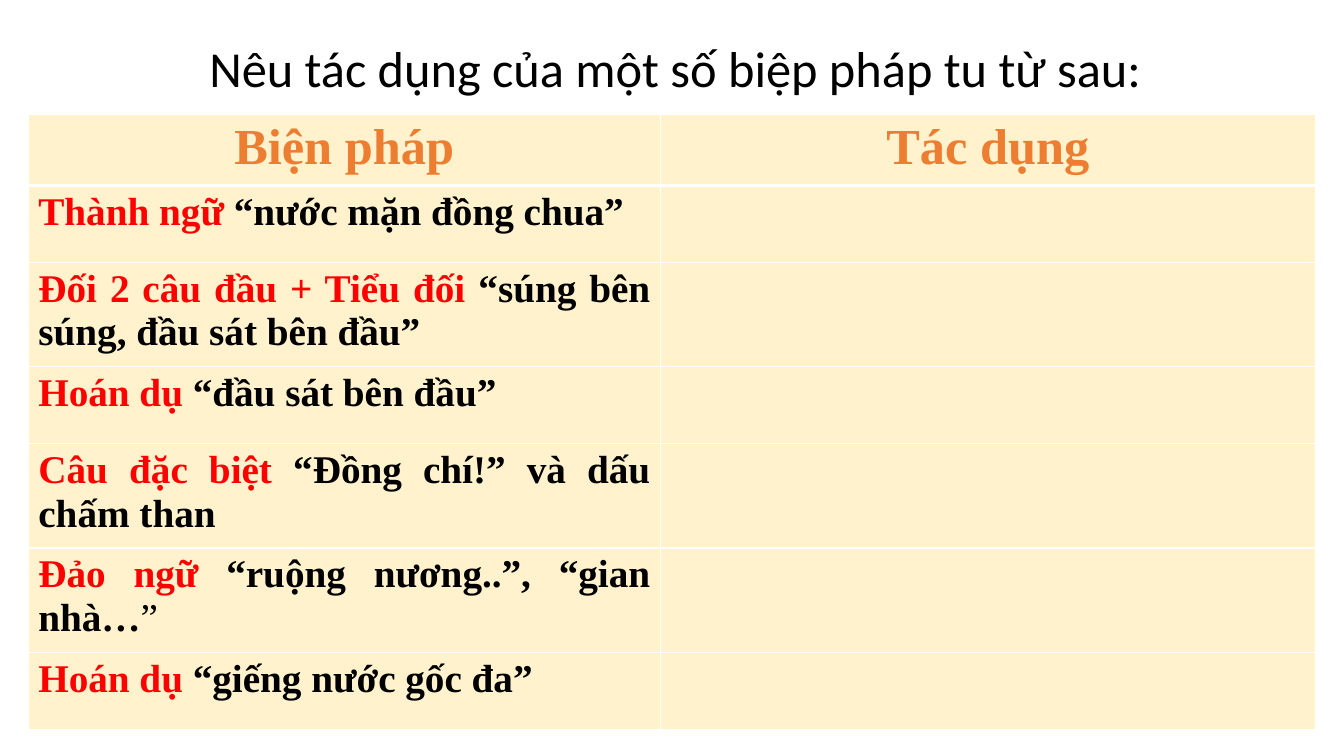
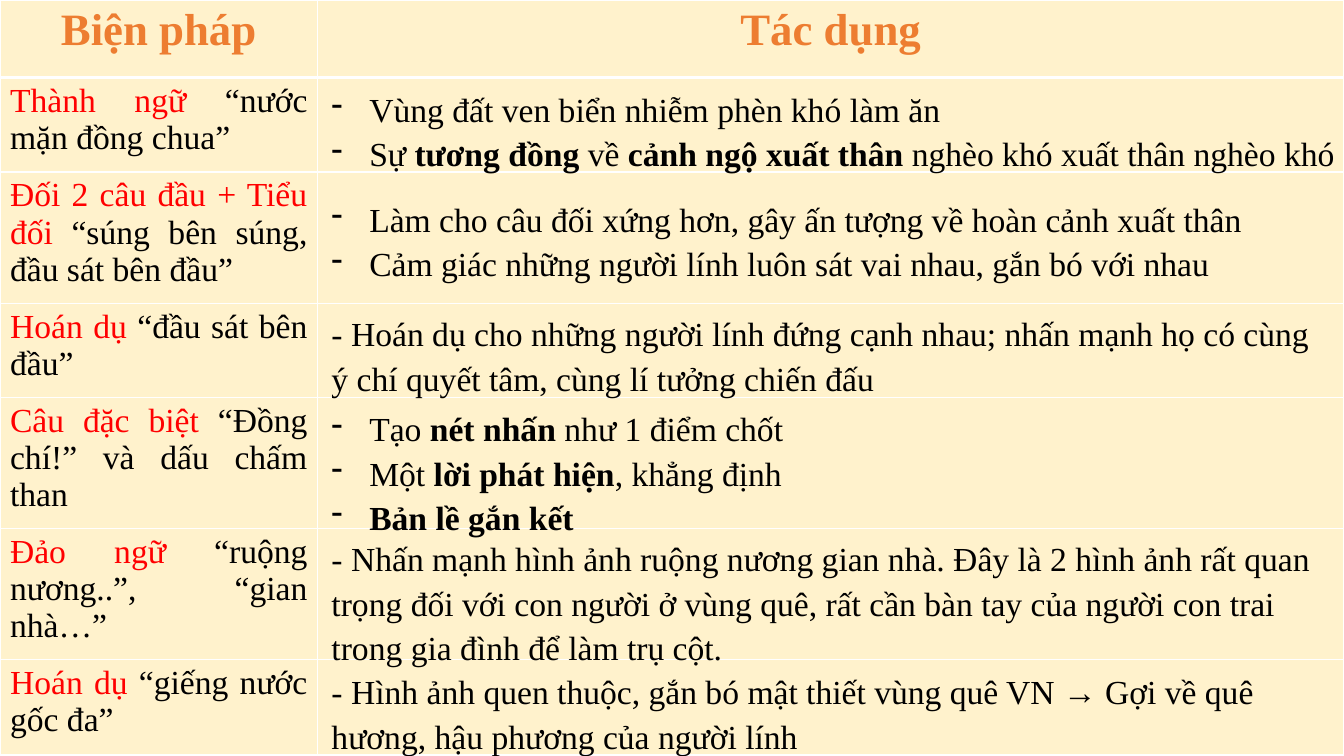
from dataclasses import dataclass

from lxml.etree import SubElement
from pptx import Presentation
from pptx.dml.color import RGBColor
from pptx.enum.text import MSO_AUTO_SIZE as AutoSize, PP_ALIGN as Align
from pptx.oxml import parse_xml
from pptx.oxml.ns import nsdecls, qn
from pptx.util import Pt


@dataclass(frozen=True)
class Theme:
    title_font: str = "Calibri"
    body_font: str = "Times New Roman"
    ink: str = "000000"
    term: str = "FF0000"
    heading: str = "ED7D31"
    cell: str = "FFF2CC"
    border: str = "FFFFFF"
    title_size: float = 36
    effect_size: float = 24
    effect_spacing: float = 1.1
    bullet_indent: float = 27
    thin: float = 1
    thick: float = 3


THEME = Theme()
HEADINGS = ("Biện pháp", "Tác dụng")
DEVICES = (
    ("Thành ngữ ", "“nước mặn đồng chua”", ""),
    ("Đối 2 câu đầu + Tiểu đối ", "“súng bên súng, đầu sát bên đầu”", ""),
    ("Hoán dụ ", "“đầu sát bên đầu”", ""),
    ("Câu đặc biệt ", "“Đồng chí!” và dấu chấm than", ""),
    ("Đảo ngữ ", "“ruộng nương..”, “gian nhà…", "”"),
    ("Hoán dụ ", "“giếng nước gốc đa”", ""),
)
EFFECTS = (
    (56.9, 733, 65.5, True, (
        "Vùng đất ven biển nhiễm phèn khó làm ăn",
        "Sự *tương đồng *về *cảnh ngộ xuất thân *nghèo khó xuất thân nghèo khó",
    )),
    (135.4, 733, 65.5, True, (
        "Làm cho câu đối xứng hơn, gây ấn tượng về hoàn cảnh xuất thân",
        "Cảm giác những người lính luôn sát vai nhau, gắn bó với nhau",
    )),
    (217.4, 723.6, 65.5, False, (
        "- Hoán dụ cho những người lính đứng cạnh nhau; nhấn mạnh họ có cùng "
        "ý chí quyết tâm, cùng lí tưởng chiến đấu",
    )),
    (285.1, 733, 94.3, True, (
        "Tạo *nét nhấn *như 1 điểm chốt",
        "Một *lời phát hiện*, khẳng định",
        "*Bản lề gắn kết*",
    )),
    (378, 723.6, 94.3, False, (
        "- Nhấn mạnh hình ảnh ruộng nương gian nhà. Đây là 2 hình ảnh rất quan "
        "trọng đối với con người ở vùng quê, rất cần bàn tay của người con trai "
        "trong gia đình để làm trụ cột.",
    )),
    (473, 723.6, 65.5, False, (
        "- Hình ảnh quen thuộc, gắn bó mật thiết vùng quê VN → Gợi về quê "
        "hương, hậu phương của người lính",
    )),
)


def add_text(paragraph, text, size, color=THEME.ink, font=THEME.body_font, bold=False):
    run = paragraph.add_run()
    run.text = text
    run.font.name = font
    run.font.size = Pt(size)
    run.font.bold = bold
    run.font.color.rgb = RGBColor.from_string(color)


def add_text_box(slide, left, top, width, height):
    shape = slide.shapes.add_textbox(Pt(left), Pt(top), Pt(width), Pt(height))
    frame = shape.text_frame
    frame.word_wrap = True
    frame.auto_size = AutoSize.SHAPE_TO_FIT_TEXT
    return frame


def add_bullet(paragraph):
    properties = paragraph._p.get_or_add_pPr()
    indent = Pt(THEME.bullet_indent)
    properties.set("marL", str(indent))
    properties.set("indent", str(-indent))
    SubElement(properties, qn("a:buChar")).set("char", "-")


def style_cell(cell, top, bottom):
    cell.fill.solid()
    cell.fill.fore_color.rgb = RGBColor.from_string(THEME.cell)
    properties = cell._tc.get_or_add_tcPr()
    sides = (("L", THEME.thin), ("R", THEME.thin), ("T", top), ("B", bottom))
    for position, (side, width) in enumerate(sides):
        properties.insert(position, parse_xml(
            f'<a:ln{side} {nsdecls("a")} w="{Pt(width)}"><a:solidFill>'
            f'<a:srgbClr val="{THEME.border}"/></a:solidFill></a:ln{side}>'))


def add_device_table(slide, left, top, columns, rows, heading_size, body_size, bold):
    table = slide.shapes.add_table(
        len(rows), len(columns), Pt(left), Pt(top), Pt(sum(columns)), Pt(sum(rows))).table
    table.first_row = table.horz_banding = False
    for column, width in zip(table.columns, columns):
        column.width = Pt(width)
    for index, (row, height) in enumerate(zip(table.rows, rows)):
        row.height = Pt(height)
        for cell in row.cells:
            style_cell(cell, THEME.thick if index == 1 else THEME.thin,
                       THEME.thick if index == 0 else THEME.thin)
    for column, heading in enumerate(HEADINGS):
        paragraph = table.cell(0, column).text_frame.paragraphs[0]
        paragraph.alignment = Align.CENTER
        add_text(paragraph, heading, heading_size, color=THEME.heading, bold=True)
    for index, (term, quote, tail) in enumerate(DEVICES, start=1):
        paragraph = table.cell(index, 0).text_frame.paragraphs[0]
        paragraph.alignment = Align.JUSTIFY
        add_text(paragraph, term, body_size, color=THEME.term, bold=bold)
        add_text(paragraph, quote, body_size, bold=bold)
        if tail:
            add_text(paragraph, tail, body_size)


def add_effect(slide, top, width, height, bulleted, lines):
    frame = add_text_box(slide, 229.7, top, width, height)
    for index, line in enumerate(lines):
        paragraph = frame.add_paragraph() if index else frame.paragraphs[0]
        if bulleted:
            add_bullet(paragraph)
        paragraph.line_spacing = THEME.effect_spacing
        for part, text in enumerate(line.split("*")):
            if text:
                add_text(paragraph, text, THEME.effect_size, bold=part % 2 == 1)


def build_question(slide):
    paragraph = add_text_box(slide, 108, 23, 749, 51).paragraphs[0]
    paragraph.alignment = Align.CENTER
    add_text(paragraph, "Nêu tác dụng của một số biệp pháp tu từ sau:",
             THEME.title_size, font=THEME.title_font)
    short, tall = 55, 74.5
    add_device_table(slide, 20.2, 82, (451.4, 468),
                     (50, short, tall, short, tall, tall, short), 36, 28, True)


def build_answer(slide):
    short, tall = 67.5, 91.4
    add_device_table(slide, 0, 0, (226.8, 733.2),
                     (55.4, short, tall, short, tall, tall, short), 32, 24, False)
    for effect in EFFECTS:
        add_effect(slide, *effect)


def main():
    presentation = Presentation()
    presentation.slide_width, presentation.slide_height = Pt(960), Pt(540)
    for build in (build_question, build_answer):
        build(presentation.slides.add_slide(presentation.slide_layouts[6]))
    presentation.save("out.pptx")


if __name__ == "__main__":
    main()
